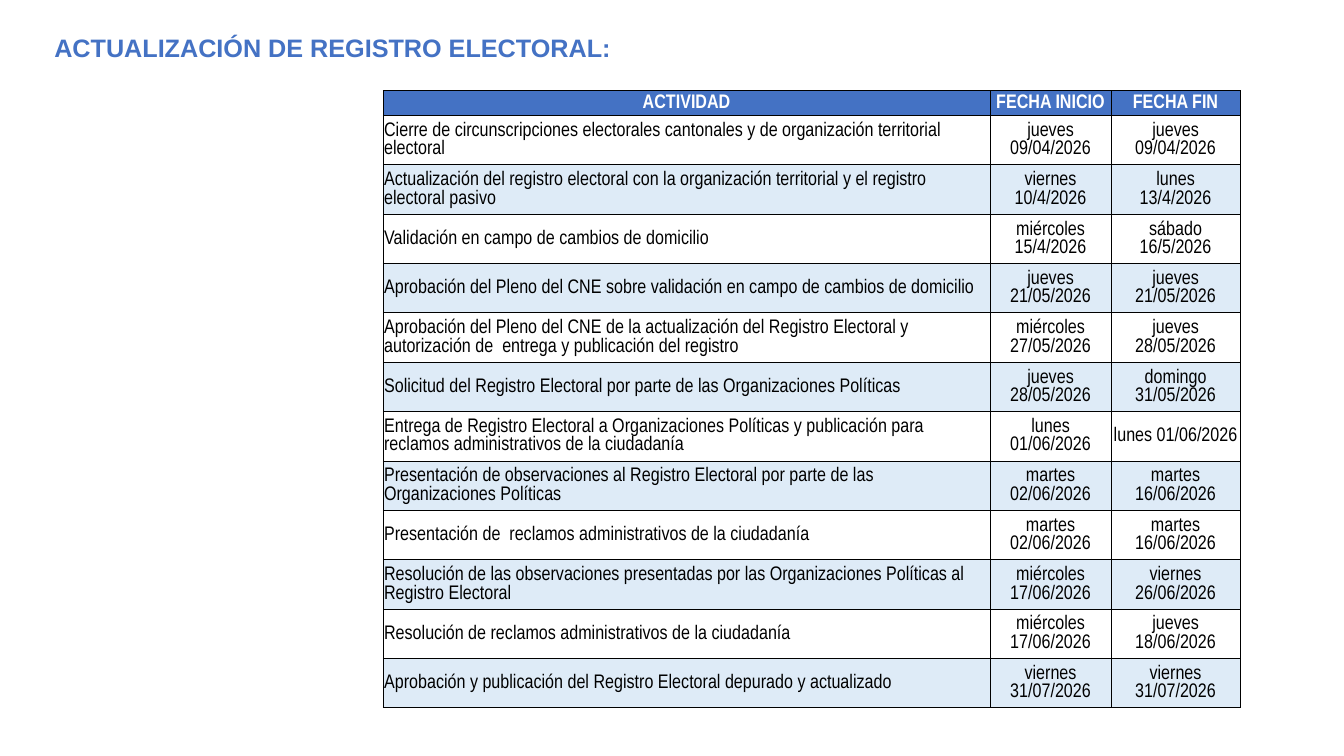
from dataclasses import dataclass

from lxml import etree
from pptx import Presentation
from pptx.dml.color import RGBColor
from pptx.enum.text import MSO_ANCHOR, PP_ALIGN
from pptx.oxml.ns import qn
from pptx.util import Inches, Pt

LEFT, CENTER = PP_ALIGN.LEFT, PP_ALIGN.CENTER
MIDDLE = MSO_ANCHOR.MIDDLE


@dataclass(frozen=True)
class Theme:
    accent: str = "4472C4"
    band: str = "DEEBF7"
    white: str = "FFFFFF"
    black: str = "000000"
    title_font: str = "Arial"
    table_font: str = "Arial Narrow"
    title_size: float = 18
    table_size: float = 14
    border_width: float = 0.5


THEME = Theme()

HEADINGS = ("ACTIVIDAD", "FECHA INICIO", "FECHA FIN")
COLUMN_WIDTHS = (6.02, 1.2, 1.28)
HEADER_HEIGHT, ROW_HEIGHT = 0.24, 0.49

ACTIVITIES = (
    ("Cierre de circunscripciones electorales cantonales y de organización territorial electoral",
     "jueves 09/04/2026", "jueves 09/04/2026"),
    ("Actualización del registro electoral con la organización territorial y el registro electoral pasivo",
     "viernes 10/4/2026", "lunes\v13/4/2026"),
    ("Validación en campo de cambios de domicilio",
     "miércoles 15/4/2026", "sábado 16/5/2026"),
    ("Aprobación del Pleno del CNE sobre validación en campo de cambios de domicilio",
     "jueves 21/05/2026", "jueves 21/05/2026"),
    ("Aprobación del Pleno del CNE de la actualización del Registro Electoral y "
     "autorización de  entrega y publicación del registro",
     "miércoles 27/05/2026", "jueves 28/05/2026"),
    ("Solicitud del Registro Electoral por parte de las Organizaciones Políticas",
     "jueves 28/05/2026", "domingo 31/05/2026"),
    ("Entrega de Registro Electoral a Organizaciones Políticas y publicación para "
     "reclamos administrativos de la ciudadanía",
     "lunes 01/06/2026", "lunes 01/06/2026"),
    ("Presentación de observaciones al Registro Electoral por parte de las Organizaciones Políticas",
     "martes 02/06/2026", "martes 16/06/2026"),
    ("Presentación de  reclamos administrativos de la ciudadanía",
     "martes 02/06/2026", "martes 16/06/2026"),
    ("Resolución de las observaciones presentadas por las Organizaciones Políticas al Registro Electoral",
     "miércoles 17/06/2026", "viernes 26/06/2026"),
    ("Resolución de reclamos administrativos de la ciudadanía",
     "miércoles 17/06/2026", "jueves 18/06/2026"),
    ("Aprobación y publicación del Registro Electoral depurado y actualizado",
     "viernes 31/07/2026", "viernes 31/07/2026"),
)


def write(frame, text, font, size, color, bold, align=LEFT):
    frame.text = text
    para = frame.paragraphs[0]
    para.alignment = align
    for span in para.runs:
        span.font.name = font
        span.font.size = Pt(size)
        span.font.bold = bold
        span.font.color.rgb = RGBColor.from_string(color)


def add_title(page, text):
    box = page.shapes.add_textbox(Inches(0.44), Inches(0.27), Inches(10.83), Inches(0.4))
    box.text_frame.word_wrap = True
    write(box.text_frame, text, THEME.title_font, THEME.title_size, THEME.accent, True)


def add_borders(cell):
    """Draw a thin line on all four sides; call before the fill is set."""
    properties = cell._tc.get_or_add_tcPr()
    for side in ("a:lnL", "a:lnR", "a:lnT", "a:lnB"):
        line = etree.SubElement(properties, qn(side), w=str(Pt(THEME.border_width)))
        fill = etree.SubElement(line, qn("a:solidFill"))
        etree.SubElement(fill, qn("a:srgbClr"), val=THEME.black)


def fill_cell(cell, text, fill, color, bold, align):
    add_borders(cell)
    cell.fill.solid()
    cell.fill.fore_color.rgb = RGBColor.from_string(fill)
    cell.vertical_anchor = MIDDLE
    cell.margin_left = cell.margin_right = cell.margin_top = Inches(0.01)
    cell.margin_bottom = 0
    write(cell.text_frame, text, THEME.table_font, THEME.table_size, color, bold, align)


def add_schedule(page):
    height = HEADER_HEIGHT + ROW_HEIGHT * len(ACTIVITIES)
    table = page.shapes.add_table(
        len(ACTIVITIES) + 1, len(HEADINGS),
        Inches(3.8), Inches(0.9), Inches(sum(COLUMN_WIDTHS)), Inches(height)).table
    for column, width in zip(table.columns, COLUMN_WIDTHS):
        column.width = Inches(width)
    for index, row in enumerate(table.rows):
        row.height = Inches(ROW_HEIGHT if index else HEADER_HEIGHT)

    for column, heading in enumerate(HEADINGS):
        fill_cell(table.cell(0, column), heading, THEME.accent, THEME.white, True, CENTER)
    for index, activity in enumerate(ACTIVITIES, start=1):
        fill = THEME.white if index % 2 else THEME.band
        for column, text in enumerate(activity):
            align = CENTER if column else LEFT
            fill_cell(table.cell(index, column), text, fill, THEME.black, False, align)


def main():
    deck = Presentation()
    deck.slide_width, deck.slide_height = Inches(13.33), Inches(7.5)
    page = deck.slides.add_slide(deck.slide_layouts[6])
    add_title(page, "ACTUALIZACIÓN DE REGISTRO ELECTORAL:")
    add_schedule(page)
    deck.save("out.pptx")


if __name__ == "__main__":
    main()
